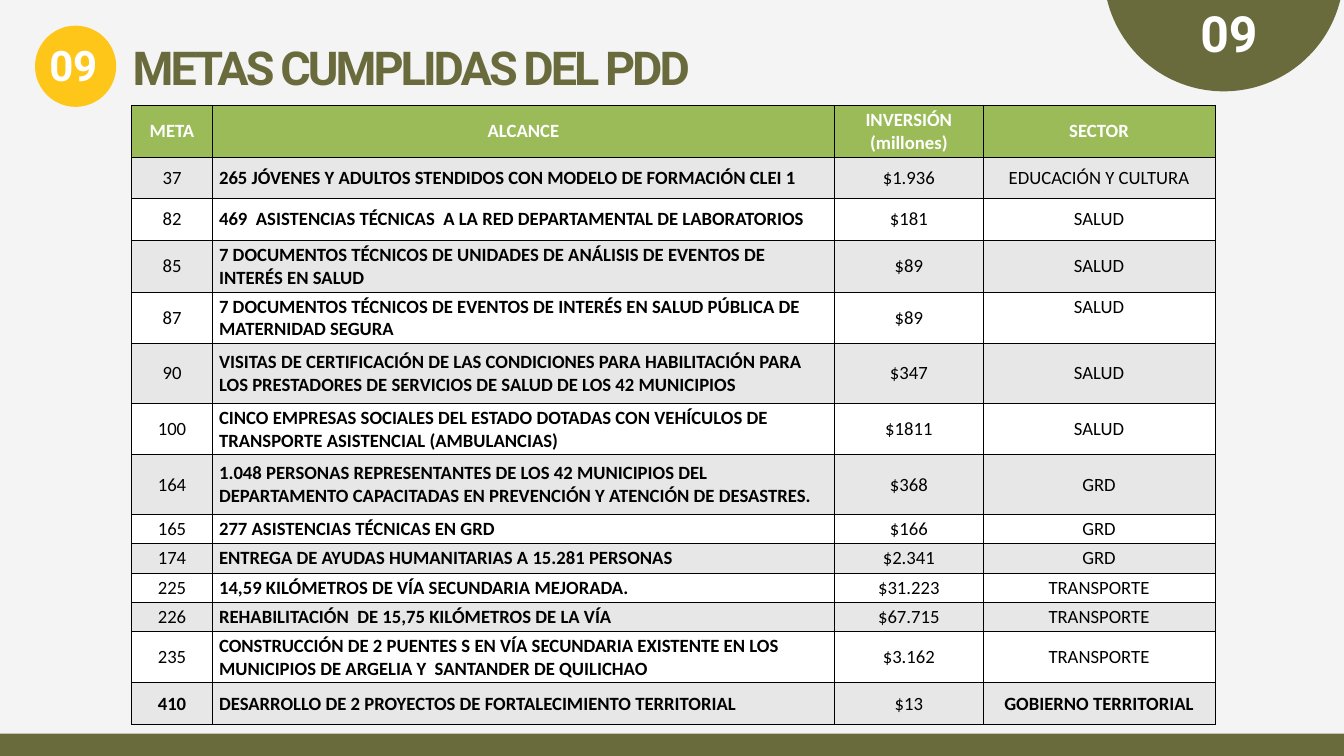
from math import asin, cos, pi, sin

from lxml.etree import SubElement
from pptx import Presentation
from pptx.dml.color import RGBColor
from pptx.enum.shapes import MSO_SHAPE as Shape
from pptx.enum.text import MSO_ANCHOR as Anchor, MSO_AUTO_SIZE as AutoSize, PP_ALIGN as Align
from pptx.oxml.ns import qn
from pptx.util import Pt

OLIVE = RGBColor(0x6A, 0x6B, 0x3C)
YELLOW = RGBColor(0xFF, 0xC6, 0x1A)
GREEN = RGBColor(0x9B, 0xBB, 0x59)
PAPER = RGBColor(0xF4, 0xF4, 0xF4)
GREY = RGBColor(0xE7, 0xE7, 0xE7)
WHITE = RGBColor(0xFF, 0xFF, 0xFF)
BLACK = RGBColor(0, 0, 0)

WIDTH, HEIGHT = 1440, 810


def write(frame, text, font="Calibri", size=20, color=BLACK, bold=False,
          align=Align.LEFT, spacing=None, before=None):
    for index, line in enumerate(text.split("\n")):
        para = frame.paragraphs[0] if index == 0 else frame.add_paragraph()
        para.alignment = align
        if before is not None:
            para.space_before = Pt(before)
        span = para.add_run()
        span.text = line
        span.font.name = font
        span.font.size = Pt(size)
        span.font.bold = bold
        span.font.color.rgb = color
        if spacing is not None:
            span.font._element.set("spc", str(round(spacing * 100)))


def paint(shape, color):
    shape.fill.solid()
    shape.fill.fore_color.rgb = color
    shape.line.fill.background()
    shape.shadow.inherit = False


deck = Presentation()
deck.slide_width, deck.slide_height = Pt(WIDTH), Pt(HEIGHT)
page = deck.slides.add_slide(deck.slide_layouts[5])
page.background.fill.solid()
page.background.fill.fore_color.rgb = PAPER
shapes = page.shapes

center_x, center_y, radius, steps = 1311.12, -30.74, 128.66, 60
start = asin(-center_y / radius)
angles = [start + (pi - 2 * start) * step / steps for step in range(steps + 1)]
arc = [(Pt(center_x + radius * cos(angle)), max(0, Pt(center_y + radius * sin(angle))))
       for angle in angles]
builder = shapes.build_freeform(*arc[0])
builder.add_line_segments(arc[1:], close=True)
paint(builder.convert_to_shape(), OLIVE)

paint(shapes.add_shape(Shape.RECTANGLE, 0, Pt(786), Pt(WIDTH), Pt(24)), OLIVE)
paint(shapes.add_shape(Shape.OVAL, Pt(37.5), Pt(27.5), Pt(87), Pt(87)), YELLOW)

title = shapes.title
shapes._spTree.append(title._element)
headings = [
    (title, (1285.2, 2.16, 69.84, 66.24), "09", 53.5, WHITE, -0.2, 1.2),
    (None, (141.12, 40.32, 663.12, 61.92), "METAS CUMPLIDAS DEL PDD", 50, OLIVE, -3.2, 1),
    (None, (51.84, 41.76, 58.32, 56.16), "09", 45, WHITE, -0.2, 1),
]
for box, place, text, size, color, spacing, before in headings:
    left, top, width, height = map(Pt, place)
    if box is None:
        box = shapes.add_textbox(left, top, width, height)
    box.left, box.top, box.width, box.height = left, top, width, height
    frame = box.text_frame
    frame.word_wrap = True
    frame.auto_size = AutoSize.SHAPE_TO_FIT_TEXT
    frame.vertical_anchor = Anchor.TOP
    frame.margin_left, frame.margin_top = Pt(1), Pt(1)
    frame.margin_right = frame.margin_bottom = 0
    write(frame, text, font="Roboto", size=size, color=color, bold=True,
          spacing=spacing, before=before)

LOW, MEDIUM, DOUBLE, TALL = 28.8, 44.64, 50.4, 64.08
column_widths = [86.4, 666.72, 159.12, 248.4]
goals = [
    (DOUBLE, "META", "ALCANCE", "INVERSIÓN\n(millones)", "SECTOR"),
    (MEDIUM, "37", "265 JÓVENES Y ADULTOS STENDIDOS CON MODELO DE FORMACIÓN CLEI 1",
     "$1.936", "EDUCACIÓN Y CULTURA"),
    (MEDIUM, "82", "469  ASISTENCIAS TÉCNICAS  A LA RED DEPARTAMENTAL DE LABORATORIOS",
     "$181", "SALUD"),
    (DOUBLE, "85", "7 DOCUMENTOS TÉCNICOS DE UNIDADES DE ANÁLISIS DE EVENTOS DE INTERÉS EN SALUD",
     "$89", "SALUD"),
    (DOUBLE, "87", "7 DOCUMENTOS TÉCNICOS DE EVENTOS DE INTERÉS EN SALUD PÚBLICA DE MATERNIDAD SEGURA",
     "$89", "SALUD"),
    (TALL, "90", "VISITAS DE CERTIFICACIÓN DE LAS CONDICIONES PARA HABILITACIÓN PARA "
     "LOS PRESTADORES DE SERVICIOS DE SALUD DE LOS 42 MUNICIPIOS", "$347", "SALUD"),
    (DOUBLE, "100", "CINCO EMPRESAS SOCIALES DEL ESTADO DOTADAS CON VEHÍCULOS DE "
     "TRANSPORTE ASISTENCIAL (AMBULANCIAS)", "$1811", "SALUD"),
    (TALL, "164", "1.048 PERSONAS REPRESENTANTES DE LOS 42 MUNICIPIOS DEL "
     "DEPARTAMENTO CAPACITADAS EN PREVENCIÓN Y ATENCIÓN DE DESASTRES.", "$368", "GRD"),
    (LOW, "165", "277 ASISTENCIAS TÉCNICAS EN GRD", "$166", "GRD"),
    (LOW, "174", "ENTREGA DE AYUDAS HUMANITARIAS A 15.281 PERSONAS", "$2.341", "GRD"),
    (LOW, "225", "14,59 KILÓMETROS DE VÍA SECUNDARIA MEJORADA.", "$31.223", "TRANSPORTE"),
    (LOW, "226", "REHABILITACIÓN  DE 15,75 KILÓMETROS DE LA VÍA", "$67.715", "TRANSPORTE"),
    (DOUBLE, "235", "CONSTRUCCIÓN DE 2 PUENTES S EN VÍA SECUNDARIA EXISTENTE EN LOS "
     "MUNICIPIOS DE ARGELIA Y  SANTANDER DE QUILICHAO", "$3.162", "TRANSPORTE"),
    (MEDIUM, "410", "DESARROLLO DE 2 PROYECTOS DE FORTALECIMIENTO TERRITORIAL",
     "$13", "GOBIERNO TERRITORIAL"),
]
table = shapes.add_table(len(goals), len(column_widths), Pt(141.12), Pt(113.04),
                         Pt(sum(column_widths)), Pt(sum(goal[0] for goal in goals))).table
table.horz_banding = False
for column, width in zip(table.columns, column_widths):
    column.width = Pt(width)

for row_index, (height, *texts) in enumerate(goals):
    table.rows[row_index].height = Pt(height)
    header = row_index == 0
    last = row_index == len(goals) - 1
    for column_index, text in enumerate(texts):
        cell = table.cell(row_index, column_index)
        properties = cell._tc.get_or_add_tcPr()
        for side in ("lnL", "lnR", "lnT", "lnB"):
            border = SubElement(properties, qn(f"a:{side}"), w=str(Pt(1)))
            SubElement(SubElement(border, qn("a:solidFill")), qn("a:srgbClr"), val=str(BLACK))
        cell.fill.solid()
        cell.fill.fore_color.rgb = GREEN if header else GREY if row_index % 2 else WHITE
        raised = texts[0] == "87" and column_index == 3
        cell.vertical_anchor = Anchor.TOP if raised else Anchor.MIDDLE
        scope = column_index == 1
        write(cell.text_frame, text, color=WHITE if header else BLACK,
              bold=header or scope or (last and column_index != 2),
              align=Align.LEFT if scope and not header else Align.CENTER)

deck.save("out.pptx")
